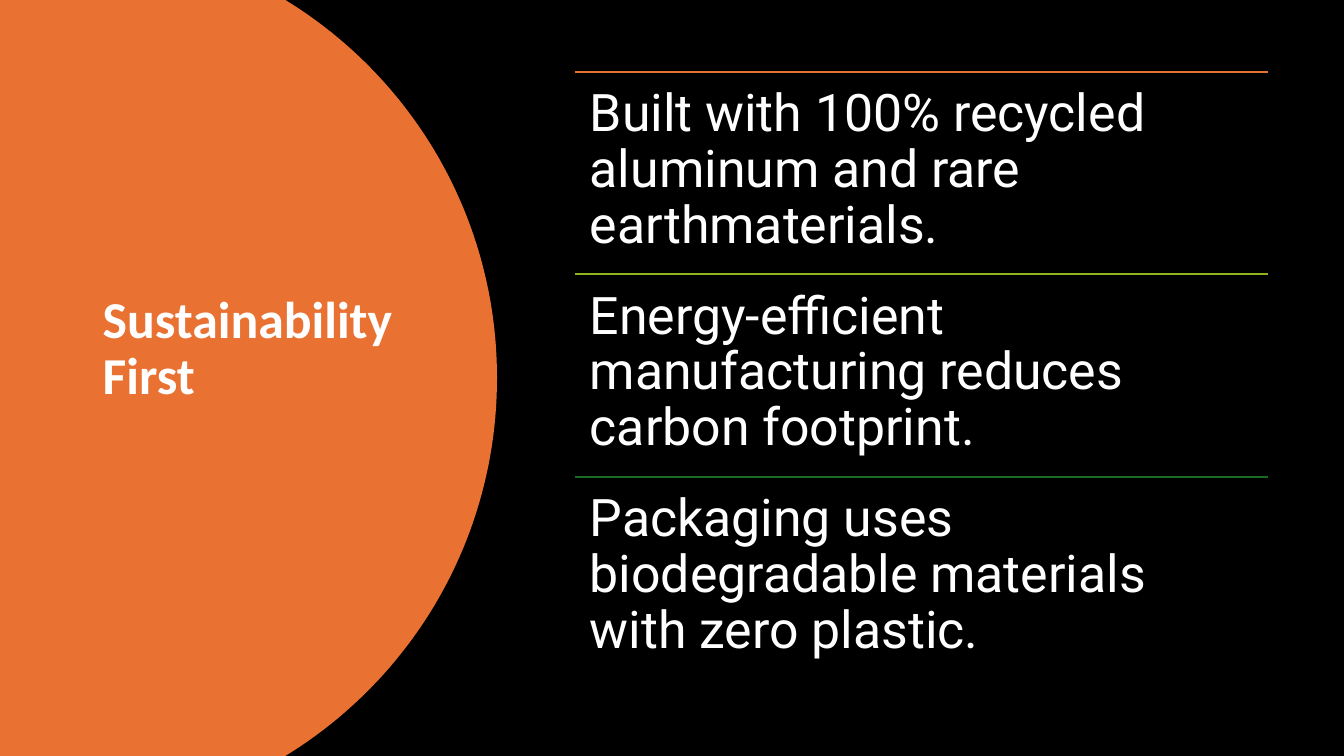
"""Build the Sustainability First slide."""
import pptx
import pptx.dml.color
import pptx.enum.shapes
import pptx.enum.text
import pptx.oxml.ns
import pptx.util
from lxml import etree

Inches = pptx.util.Inches


def color(value):
    """Return the colour for a hex string."""
    return pptx.dml.color.RGBColor.from_string(value)


def bezier(points, steps=48):
    """Return evenly sampled points on a cubic curve."""
    curve = []
    for step in range(steps + 1):
        t = step / steps
        weights = ((1 - t) ** 3, 3 * t * (1 - t) ** 2, 3 * t ** 2 * (1 - t), t ** 3)
        curve.append(tuple(sum(w * p[axis] for w, p in zip(weights, points)) for axis in (0, 1)))
    return curve


class SlideBuilder:
    """Hold the text style and the current slide."""

    def __init__(self, slide, text_size=37, text_color="FFFFFF"):
        """Keep the slide and its shared text style."""
        self.slide = slide
        self.text_size = text_size
        self.text_color = text_color

    def background(self, fill):
        """Fill the slide background."""
        self.slide.background.fill.solid()
        self.slide.background.fill.fore_color.rgb = color(fill)

    def outline(self, points, fill):
        """Draw a filled closed outline."""
        corners = [(Inches(x), Inches(y)) for x, y in points]
        builder = self.slide.shapes.build_freeform(*corners[0])
        builder.add_line_segments(corners[1:], close=True)
        shape = builder.convert_to_shape()
        shape.shadow.inherit = False
        shape.fill.solid()
        shape.fill.fore_color.rgb = color(fill)
        shape.line.fill.background()

    def rule(self, left, top, width, line_color):
        """Draw a horizontal rule."""
        line = self.slide.shapes.add_connector(
            pptx.enum.shapes.MSO_CONNECTOR.STRAIGHT,
            Inches(left), Inches(top), Inches(left + width), Inches(top))
        line.line.color.rgb = color(line_color)
        line.line.width = pptx.util.Pt(1.5)
        etree.SubElement(line._element.spPr, pptx.oxml.ns.qn("a:effectLst"))

    def text(self, left, top, width, height, words, font, bold=False, middle=False, inset=(0.1, 0.05)):
        """Add a wrapped text box."""
        box = self.slide.shapes.add_textbox(Inches(left), Inches(top), Inches(width), Inches(height))
        frame = box.text_frame
        frame.word_wrap = True
        frame.margin_left = frame.margin_right = Inches(inset[0])
        frame.margin_top = frame.margin_bottom = Inches(inset[1])
        anchors = pptx.enum.text.MSO_ANCHOR
        frame.vertical_anchor = anchors.MIDDLE if middle else anchors.TOP
        para = frame.paragraphs[0]
        para.line_spacing = 0.9
        span = para.add_run()
        span.text = words
        span.font.name = font
        span.font.size = pptx.util.Pt(self.text_size)
        span.font.bold = bold
        span.font.color.rgb = color(self.text_color)


def main():
    """Build and save the deck."""
    deck = pptx.Presentation()
    deck.slide_width = Inches(13.33)
    deck.slide_height = Inches(7.5)
    page = SlideBuilder(deck.slides.add_slide(deck.slide_layouts[6]))
    page.background("000000")

    upper_arc = bezier([(2.83, 0), (4.09, 0.77), (4.93, 2.16), (4.93, 3.75)])
    lower_arc = [(x, 7.5 - y) for x, y in reversed(upper_arc[:-1])]
    page.outline([(0, 0), *upper_arc, *lower_arc, (0, 7.5)], "E97132")
    page.text(0.92, 0.7, 3.23, 5.54, "Sustainability First", "Calibri", bold=True, middle=True)

    points = [
        ("E97132", "Built with 100% recycled aluminum and rare earthmaterials."),
        ("8EB21E", "Energy-efficient manufacturing reduces carbon footprint."),
        ("196B24", "Packaging uses biodegradable materials with zero plastic."),
    ]
    left, width, row_height = 5.7, 6.88, 2.01
    for row, (line_color, words) in enumerate(points):
        top = 0.71 + row * row_height
        page.rule(left, top, width, line_color)
        page.text(left, top, width, row_height, words, "Roboto", inset=(0.15, 0.15))

    deck.save("out.pptx")


if __name__ == "__main__":
    main()
